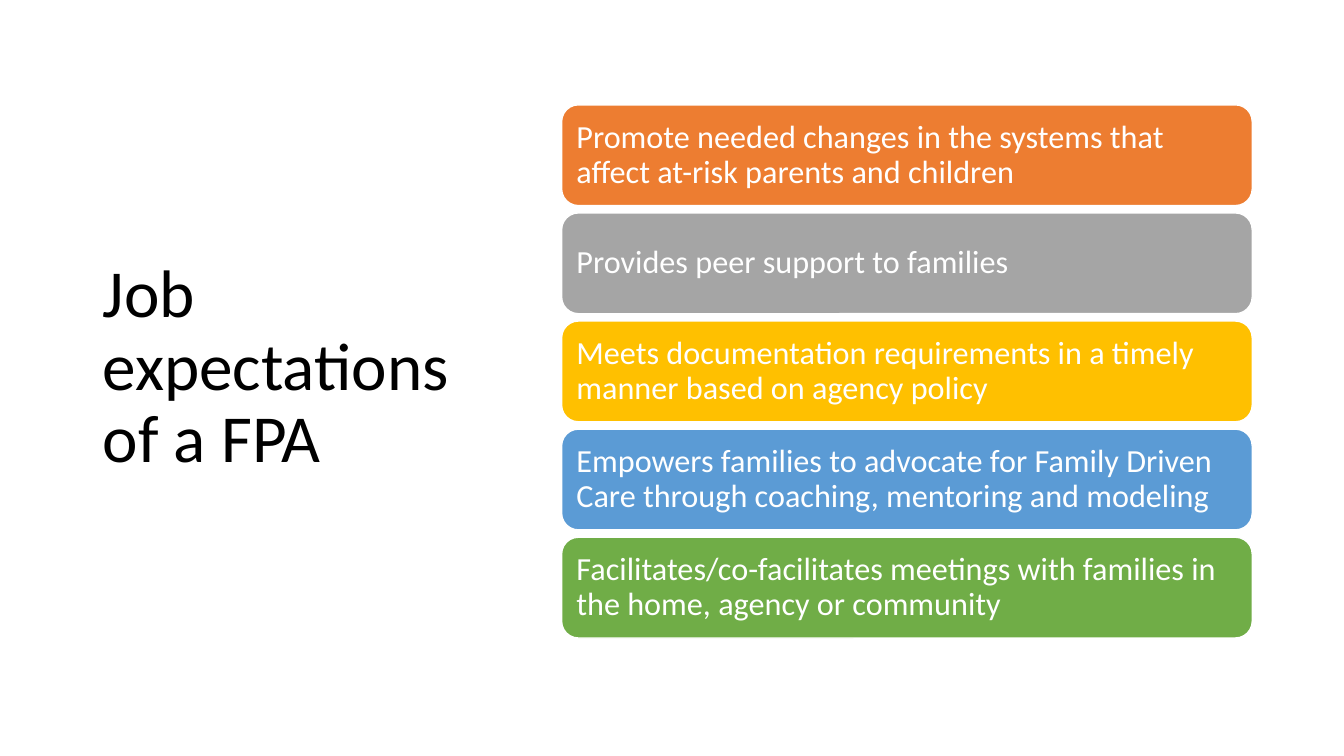
from dataclasses import dataclass

from pptx import Presentation, util as u
from pptx.dml.color import RGBColor
from pptx.enum import shapes, text

WIDE, HIGH = u.Inches(13.33), u.Inches(7.5)
FONT = "Calibri"
COLORS = {
    "black": "000000",
    "white": "FFFFFF",
    "orange": "ED7D31",
    "gray": "A5A5A5",
    "gold": "FFC000",
    "blue": "5B9BD5",
    "green": "70AD47",
}

# Inches on the slide: left edge, first row, card size and row step
LEFT, TOP, CARD_W, CARD_H, STEP = 5.57, 1.04, 6.85, 1, 1.0725


@dataclass
class Card:
    words: str
    color: str


CARDS = [
    Card("Promote needed changes in the systems that affect at-risk parents and children", "orange"),
    Card("Provides peer support to families", "gray"),
    Card("Meets documentation requirements in a timely manner based on agency policy", "gold"),
    Card("Empowers families to advocate for Family Driven Care through coaching, "
         "mentoring and modeling", "blue"),
    Card("Facilitates/co-facilitates meetings with families in the home, agency or community", "green"),
]


def tint(name: str) -> RGBColor:
    return RGBColor.from_string(COLORS[name])


def write(shape, words: str, size: float, color: str) -> None:
    """Set left-aligned, vertically centred text in a shape."""
    frame = shape.text_frame
    frame.word_wrap = True
    frame.vertical_anchor = text.MSO_ANCHOR.MIDDLE
    frame.text = words
    line = frame.paragraphs[0]
    line.alignment = text.PP_ALIGN.LEFT
    line.line_spacing = 0.9
    font = line.runs[0].font
    font.name, font.size = FONT, u.Pt(size)
    font.color.rgb = tint(color)


def draw_title(slide) -> None:
    box = slide.shapes.add_textbox(
        u.Inches(0.92), u.Inches(0.61), u.Inches(3.69), u.Inches(6.09))
    write(box, "Job expectations of a FPA", 48, "black")


def draw_card(slide, card: Card, row: int) -> None:
    box = slide.shapes.add_shape(
        shapes.MSO_SHAPE.ROUNDED_RECTANGLE,
        u.Inches(LEFT), u.Inches(TOP + row * STEP), u.Inches(CARD_W), u.Inches(CARD_H))
    box.shadow.inherit = False
    box.fill.solid()
    box.fill.fore_color.rgb = tint(card.color)
    box.line.color.rgb = tint("white")
    box.line.width = u.Pt(1)
    frame = box.text_frame
    frame.margin_left = frame.margin_right = u.Inches(0.1)
    frame.margin_top = frame.margin_bottom = u.Inches(0.1)
    write(box, card.words, 23, "white")


def main() -> None:
    deck = Presentation()
    deck.slide_width, deck.slide_height = WIDE, HIGH
    slide = deck.slides.add_slide(deck.slide_layouts[6])
    draw_title(slide)
    for row, card in enumerate(CARDS):
        draw_card(slide, card, row)
    deck.save("out.pptx")


if __name__ == "__main__":
    main()
